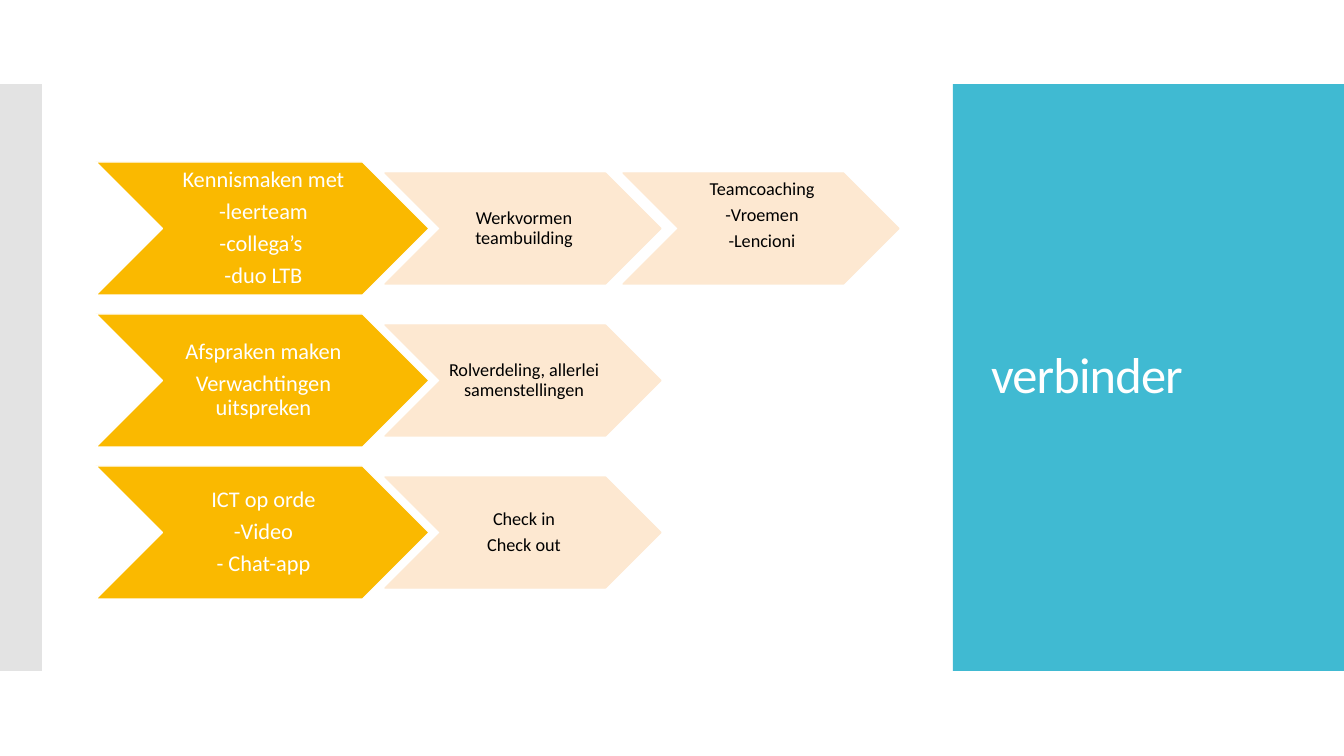
"""Build the 'verbinder' slide: three chevron rows beside a title panel."""
from dataclasses import dataclass

from pptx import Presentation
from pptx.dml.color import RGBColor
from pptx.enum.shapes import MSO_SHAPE
from pptx.enum.text import MSO_ANCHOR, MSO_AUTO_SIZE, PP_ALIGN
from pptx.util import Pt

TITLE = "verbinder"
ROWS = [
    [["Kennismaken met", "-leerteam", "-collega’s ", "-duo LTB"],
     ["Werkvormen teambuilding"],
     ["Teamcoaching", "-Vroemen", "-Lencioni"]],
    [["Afspraken maken", "Verwachtingen uitspreken"],
     ["Rolverdeling, allerlei samenstellingen"]],
    [["ICT op orde", "-Video", "- Chat-app"],
     ["Check in", "Check out"]],
]


@dataclass(frozen=True)
class Theme:
    """Colours, font and type sizes."""
    teal: str = "40BAD2"
    gray: str = "E3E3E3"
    gold: str = "FAB900"
    cream: str = "FDE8D1"
    white: str = "FFFFFF"
    black: str = "000000"
    font: str = "Calibri"
    head: int = 36
    main: int = 16
    sub: int = 13


LOOK = Theme()
SCALE = 914400 / 100.8
PITCH = 152
MAIN = (96, 162, 333, 133)
SUB = (385, 173, 276, 111)
STEP = 238
LIFT = 26


def px(*vals):
    """Turn pixel lengths into EMU."""
    return [round(val * SCALE) for val in vals]


def write(shape, lines, size, color, align=PP_ALIGN.CENTER, after=0.0,
          inset=(2, 1, 0, 1), track=0):
    """Fill a shape with formatted paragraphs."""
    frame = shape.text_frame
    frame.auto_size = MSO_AUTO_SIZE.NONE
    frame.word_wrap = True
    frame.vertical_anchor = MSO_ANCHOR.MIDDLE
    (frame.margin_left, frame.margin_top,
     frame.margin_right, frame.margin_bottom) = px(*inset)
    for num, line in enumerate(lines):
        para = frame.add_paragraph() if num else frame.paragraphs[0]
        para.alignment = align
        para.line_spacing = 0.9
        para.space_before = Pt(0)
        para.space_after = Pt(after)
        run = para.add_run()
        run.text = line
        run.font.name = LOOK.font
        run.font.size = Pt(size)
        run.font.color.rgb = RGBColor.from_string(color)
        if track:
            run.font._element.set("spc", str(track))


def draw(slide, kind, box, fill, edge=None):
    """Add a flat preset shape."""
    shape = slide.shapes.add_shape(kind, *px(*box))
    shape.shadow.inherit = False
    shape.fill.solid()
    shape.fill.fore_color.rgb = RGBColor.from_string(fill)
    if edge:
        shape.line.color.rgb = RGBColor.from_string(edge)
        shape.line.width = Pt(0.85)
    else:
        shape.line.fill.background()
    return shape


def chain(slide, row, cells):
    """Draw one row of chevrons."""
    for col, lines in enumerate(cells):
        left, top, wide, high = SUB if col else MAIN
        left += STEP * max(col - 1, 0)
        fill, edge, ink, size = (
            (LOOK.cream, LOOK.cream, LOOK.black, LOOK.sub) if col
            else (LOOK.gold, LOOK.white, LOOK.white, LOOK.main))
        box = (left, top + row * PITCH, wide, high)
        shape = draw(slide, MSO_SHAPE.CHEVRON, box, fill, edge)
        foot = LIFT if col == 2 else 1
        write(shape, lines, size, ink, after=round(size * 0.35, 2),
              inset=(2, 1, 0, foot))


def main():
    """Build and save the deck."""
    deck = Presentation()
    deck.slide_width, deck.slide_height = px(1344, 756)
    slide = deck.slides.add_slide(deck.slide_layouts[5])
    draw(slide, MSO_SHAPE.RECTANGLE, (953, 84, 391, 587), LOOK.teal)
    draw(slide, MSO_SHAPE.RECTANGLE, (0, 84, 42, 587), LOOK.gray)
    title = slide.shapes.title
    title.left, title.top, title.width, title.height = px(981, 124, 325, 507)
    write(title, [TITLE], LOOK.head, LOOK.white, align=PP_ALIGN.LEFT,
          after=6, inset=(10, 5, 10, 5), track=-60)
    slide.shapes._spTree.append(title._element)
    for row, cells in enumerate(ROWS):
        chain(slide, row, cells)
    deck.save("out.pptx")


if __name__ == "__main__":
    main()
